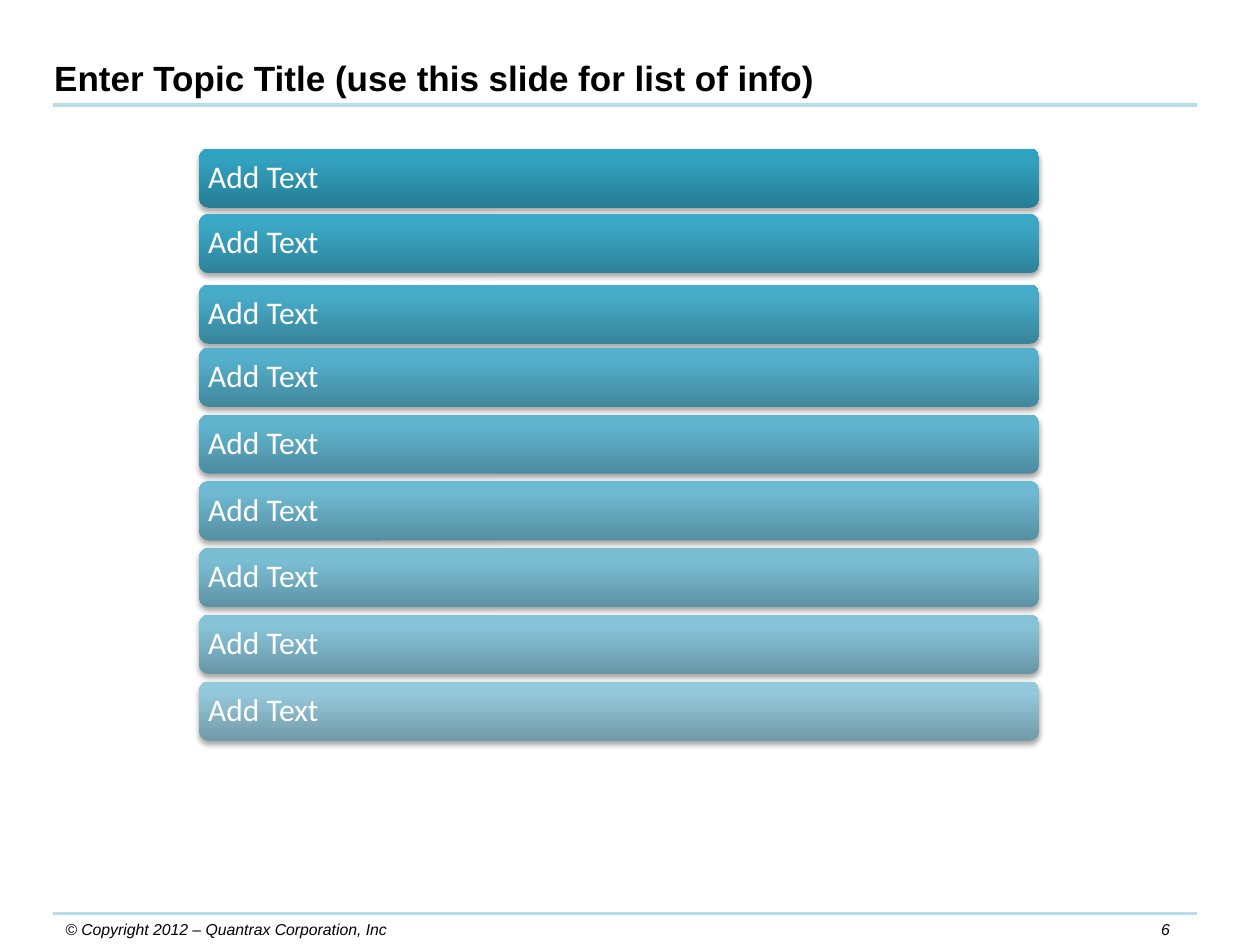
from lxml import etree
from pptx import Presentation
from pptx.dml.color import RGBColor
from pptx.enum.shapes import MSO_CONNECTOR, MSO_SHAPE
from pptx.enum.text import MSO_ANCHOR, MSO_AUTO_SIZE, PP_ALIGN
from pptx.oxml import parse_xml
from pptx.oxml.ns import nsdecls, qn
from pptx.util import Inches, Pt

BLACK = RGBColor(0x00, 0x00, 0x00)
WHITE = RGBColor(0xFF, 0xFF, 0xFF)
RULE_BLUE = RGBColor(0xB7, 0xDE, 0xE8)

# Top of each bar, then its gradient from the bottom edge to the top edge
BARS = [
    (1.18, "267C93", "32A1BE", "2FA3C2"),
    (1.70, "2D8198", "3BA7C5", "38A9C9"),
    (2.26, "37849A", "47ABC8", "45ADCC"),
    (2.76, "41879C", "54AFCB", "52B2CE"),
    (3.29, "4B8B9F", "61B4CE", "5FB6D1"),
    (3.82, "558EA1", "6EB9D1", "6CBBD4"),
    (4.35, "5E92A4", "7BBED4", "79BFD7"),
    (4.88, "6896A6", "87C3D8", "86C4DA"),
    (5.41, "729AA8", "94C8DB", "93C9DD"),
]
GRADIENT_STOPS = (0, 80, 100)


def style_text(p, font, size, color, bold=False, italic=False):
    for r in p.runs:
        r.font.name = font
        r.font.size = Pt(size)
        r.font.color.rgb = color
        r.font.bold = bold
        r.font.italic = italic


def add_title(slide, text):
    title = slide.shapes.title
    title.left, title.top = Inches(0.33), Inches(0.4)
    title.width, title.height = Inches(6.6), Inches(0.44)
    tf = title.text_frame
    tf.text = text
    tf.auto_size = MSO_AUTO_SIZE.NONE
    tf.vertical_anchor = MSO_ANCHOR.TOP
    p = tf.paragraphs[0]
    p.alignment = PP_ALIGN.LEFT
    style_text(p, "Arial", 20, BLACK, bold=True)


def add_rule(slide, y):
    line = slide.shapes.add_connector(
        MSO_CONNECTOR.STRAIGHT, Inches(0.42), Inches(y), Inches(9.5), Inches(y))
    line.line.color.rgb = RULE_BLUE
    line.line.width = Pt(2.25)
    etree.SubElement(line._element.spPr, qn("a:effectLst"))


def add_footer_text(slide, text, left, width, align):
    box = slide.shapes.add_textbox(
        Inches(left), Inches(7.25), Inches(width), Inches(0.25))
    tf = box.text_frame
    tf.word_wrap = True
    tf.text = text
    p = tf.paragraphs[0]
    p.alignment = align
    style_text(p, "Arial", 9, BLACK, italic=True)


def set_gradient_and_shadow(sp, colors):
    """Give the shape an upward gradient and a soft shadow below it."""
    stops = "".join(
        f'<a:gs pos="{pos * 1000}"><a:srgbClr val="{color}"/></a:gs>'
        for pos, color in zip(GRADIENT_STOPS, colors))
    gradient = parse_xml(
        f'<a:gradFill {nsdecls("a")} rotWithShape="1"><a:gsLst>{stops}</a:gsLst>'
        '<a:lin ang="16200000" scaled="0"/></a:gradFill>')
    shadow = parse_xml(
        f'<a:effectLst {nsdecls("a")}>'
        f'<a:outerShdw blurRad="{Pt(3.1)}" dist="{Pt(1.8)}" dir="5400000" rotWithShape="0">'
        '<a:srgbClr val="000000"><a:alpha val="35000"/></a:srgbClr>'
        '</a:outerShdw></a:effectLst>')
    sp.line.fill.background()
    spPr = sp._element.spPr
    spPr.find(qn("a:prstGeom")).addnext(gradient)
    spPr.find(qn("a:ln")).addnext(shadow)


def add_bar(slide, text, top, colors):
    sp = slide.shapes.add_shape(
        MSO_SHAPE.ROUNDED_RECTANGLE,
        Inches(1.58), Inches(top), Inches(6.67), Inches(0.47))
    set_gradient_and_shadow(sp, colors)
    tf = sp.text_frame
    tf.text = text
    tf.vertical_anchor = MSO_ANCHOR.MIDDLE
    tf.margin_left = tf.margin_right = Inches(0.05)
    tf.margin_top = tf.margin_bottom = Inches(0.05)
    p = tf.paragraphs[0]
    p.alignment = PP_ALIGN.LEFT
    p.line_spacing = 0.9
    style_text(p, "Calibri", 18, WHITE)


def main():
    prs = Presentation()
    prs.slide_width, prs.slide_height = Inches(10), Inches(7.5)
    slide = prs.slides.add_slide(prs.slide_layouts[5])

    for y in (0.83, 7.25):
        add_rule(slide, y)
    add_footer_text(slide, "© Copyright 2012 – Quantrax Corporation, Inc",
                    0.42, 3.25, PP_ALIGN.LEFT)
    add_footer_text(slide, "6", 9, 0.5, PP_ALIGN.CENTER)
    for top, *colors in BARS:
        add_bar(slide, "Add Text", top, colors)
    add_title(slide, "Enter Topic Title (use this slide for list of info)")

    prs.save("out.pptx")


if __name__ == "__main__":
    main()
